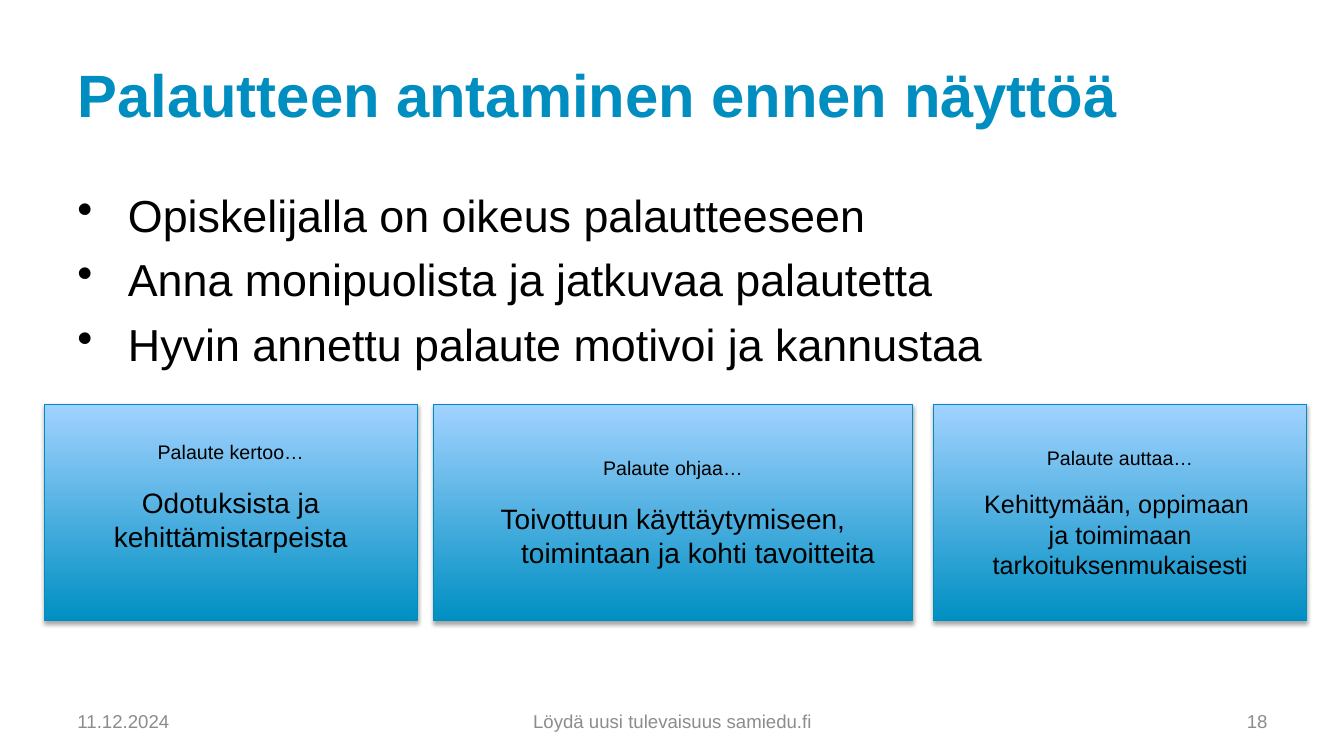
import pptx
import pptx.dml.color
import pptx.enum.shapes
import pptx.enum.text
import pptx.oxml.ns
import pptx.util
from lxml import etree

Inches = pptx.util.Inches
Pt = pptx.util.Pt
RGBColor = pptx.dml.color.RGBColor
ALIGN = pptx.enum.text.PP_ALIGN
ANCHOR = pptx.enum.text.MSO_ANCHOR
qn = pptx.oxml.ns.qn

TITLE_BLUE = RGBColor(0x00, 0x8D, 0xBF)
LINE_BLUE = RGBColor(0x00, 0x8C, 0xBF)
DEEP_BLUE = RGBColor(0x00, 0x8F, 0xC3)
LIGHT_BLUE = RGBColor(0xA1, 0xD2, 0xFF)
BLACK = RGBColor(0x00, 0x00, 0x00)
GREY = RGBColor(0x8C, 0x8C, 0x8C)

BULLETS = [
    "Opiskelijalla on oikeus palautteeseen",
    "Anna monipuolista ja jatkuvaa palautetta",
    "Hyvin annettu palaute motivoi ja kannustaa",
]
CARDS = [
    (0.44, 3.7, "Palaute kertoo…", ["Odotuksista ja", "kehittämistarpeista"], 20, 16.1, 0.37),
    (4.3, 4.75, "Palaute ohjaa…",
     ["Toivottuun käyttäytymiseen, toimintaan ja kohti tavoitteita"], 20, 16.1, 0.05),
    (9.26, 3.7, "Palaute auttaa…",
     ["Kehittymään, oppimaan ", "ja toimimaan", "tarkoituksenmukaisesti"], 18, 13.8, 0.05),
]
FOOTERS = [
    (0.67, 3.11, "11.12.2024", ALIGN.LEFT),
    (4.56, 4.22, "Löydä uusi tulevaisuus samiedu.fi", ALIGN.CENTER),
    (9.56, 3.11, "18", ALIGN.RIGHT),
]


def write_para(para, text, size, color, align=ALIGN.LEFT, bold=False):
    """Fill a paragraph with text and format its runs."""
    para.text = text
    para.alignment = align
    for span in para.runs:
        span.font.name = "Arial"
        span.font.size = Pt(size)
        span.font.bold = bold
        span.font.color.rgb = color


def hang_indent(para):
    """Give a paragraph a half-inch hanging indent."""
    properties = para._p.get_or_add_pPr()
    properties.set("marL", str(Inches(0.5)))
    properties.set("indent", str(Inches(-0.5)))
    return properties


def add_title(page, left, top, width, height):
    """Place and format the slide title."""
    title = page.shapes.title
    title.left, title.top = Inches(left), Inches(top)
    title.width, title.height = Inches(width), Inches(height)
    frame = title.text_frame
    frame.auto_size = pptx.enum.text.MSO_AUTO_SIZE.NONE
    frame.vertical_anchor = ANCHOR.MIDDLE
    write_para(frame.paragraphs[0], "Palautteen antaminen ennen näyttöä", 42.7,
               TITLE_BLUE, bold=True)


def add_text_box(page, left, top, width, height):
    """Add a wrapping text box and return its text frame."""
    box = page.shapes.add_textbox(Inches(left), Inches(top), Inches(width), Inches(height))
    box.text_frame.word_wrap = True
    return box.text_frame


def add_bullets(page, left, top, width, height):
    """Add the bulleted list."""
    frame = add_text_box(page, left, top, width, height)
    frame.margin_top = Inches(0.11)
    for index, text in enumerate(BULLETS):
        para = frame.add_paragraph() if index else frame.paragraphs[0]
        etree.SubElement(hang_indent(para), qn("a:buChar"), char="•")
        write_para(para, text, 32, BLACK)
        if index:
            para.space_before = Pt(7.7)


def add_shadow(shape):
    """Give a shape a soft shadow below it."""
    shape.shadow.inherit = False
    effects = shape._element.spPr.find(qn("a:effectLst"))
    shadow = etree.SubElement(effects, qn("a:outerShdw"), blurRad=str(Pt(3.1)),
                              dist=str(Pt(1.8)), dir="5400000", rotWithShape="0")
    color = etree.SubElement(shadow, qn("a:srgbClr"), val=str(BLACK))
    etree.SubElement(color, qn("a:alpha"), val="35000")


def add_card(page, left, top, width, height, heading, lines, size, gap, bottom):
    """Add one gradient card with a small heading above its message."""
    card = page.shapes.add_shape(pptx.enum.shapes.MSO_SHAPE.RECTANGLE, Inches(left),
                                 Inches(top), Inches(width), Inches(height))
    card.fill.gradient()
    card.fill.gradient_angle = 90
    for stop, color, position in zip(card.fill.gradient_stops, (DEEP_BLUE, LIGHT_BLUE), (0, 1)):
        stop.color.rgb = color
        stop.position = position
    card.line.color.rgb = LINE_BLUE
    card.line.width = Pt(0.75)
    add_shadow(card)
    frame = card.text_frame
    frame.word_wrap = True
    frame.vertical_anchor = ANCHOR.MIDDLE
    frame.margin_bottom = Inches(bottom)
    for index, text in enumerate([heading] + lines):
        para = frame.add_paragraph() if index else frame.paragraphs[0]
        hang_indent(para)
        write_para(para, text, size if index else 14, BLACK, ALIGN.CENTER)
        if index == 1:
            para.space_before = Pt(gap)


def add_footers(page, top, height):
    """Add the date, footer line and slide number."""
    for left, width, text, align in FOOTERS:
        frame = add_text_box(page, left, top, width, height)
        frame.vertical_anchor = ANCHOR.MIDDLE
        write_para(frame.paragraphs[0], text, 13.3, GREY, align)


def main():
    """Build and save the slide."""
    deck = pptx.Presentation()
    deck.slide_width, deck.slide_height = Inches(13.33), Inches(7.5)
    page = deck.slides.add_slide(deck.slide_layouts[5])
    add_title(page, 0.67, 0.3, 11.58, 1.25)
    add_bullets(page, 0.67, 1.75, 11.58, 4.54)
    add_footers(page, 6.95, 0.4)
    for left, width, *content in CARDS:
        add_card(page, left, 4.01, width, 2.15, *content)
    deck.save("out.pptx")


if __name__ == "__main__":
    main()
